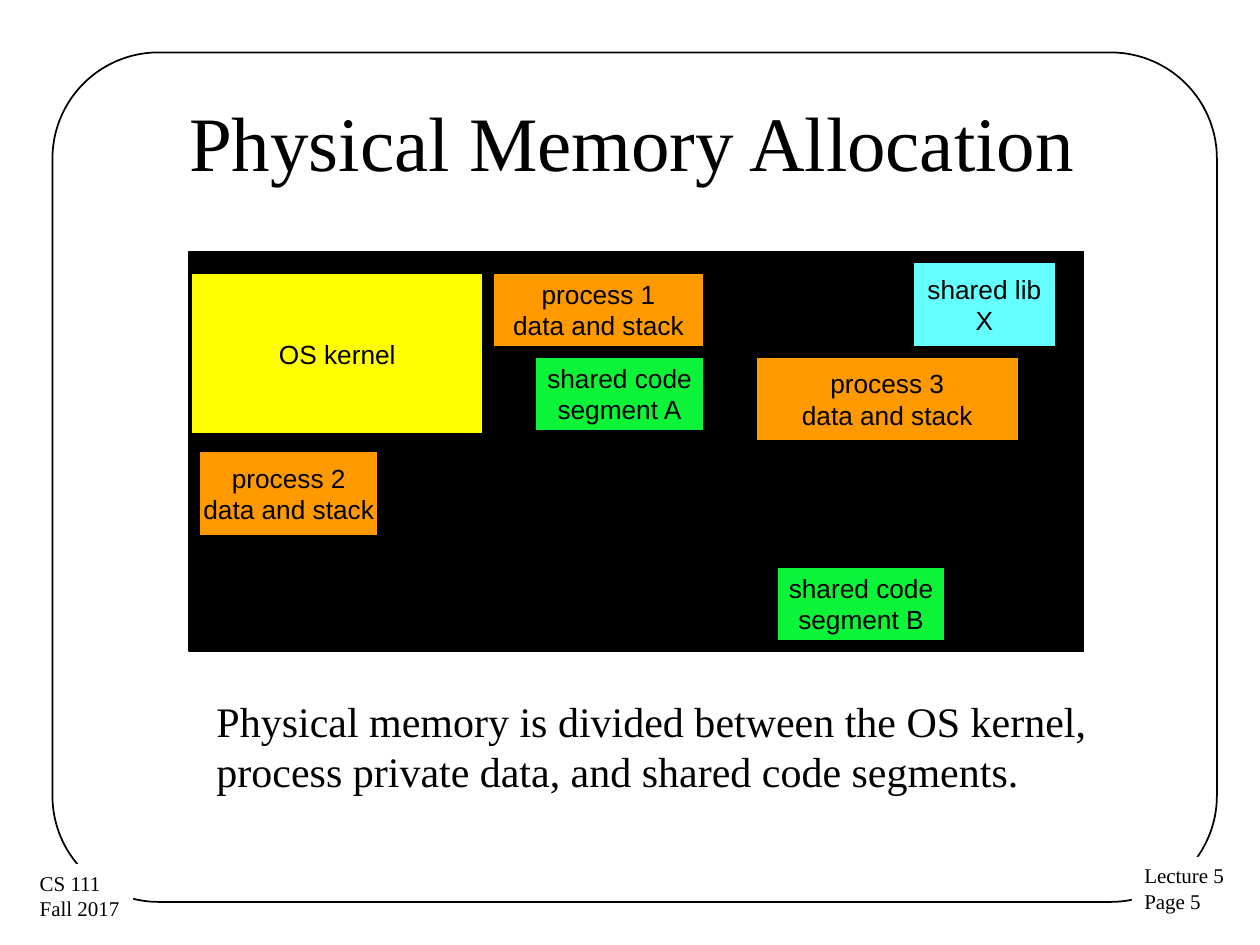
from pptx import Presentation, util as u
from pptx.dml.color import RGBColor
from pptx.enum import shapes, text

UNITS_PER_INCH = 12
SERIF, SANS = "Times New Roman", "Arial"
BLACK, WHITE = "000000", "FFFFFF"
KERNEL, PROCESS, CODE, LIBRARY = "FFFF00", "FF9900", "0CF438", "66FFFF"

SEGMENTS = [
    ("OS kernel", KERNEL, (18.25, 26, 27.75, 15.35)),
    ("process 1\ndata and stack", PROCESS, (47, 26, 20, 7)),
    ("shared code\nsegment A", CODE, (51, 34, 16, 7)),
    ("shared lib\nX", LIBRARY, (87, 25, 13.5, 8)),
    ("process 2\ndata and stack", PROCESS, (19, 43, 17, 8)),
    ("process 3\ndata and stack", PROCESS, (72, 34, 25, 8)),
    ("shared code\nsegment B", CODE, (74, 54, 16, 7)),
]


def color(value):
    return RGBColor.from_string(value)


def grid(cells):
    return [u.Inches(cell / UNITS_PER_INCH) for cell in cells]


def write(frame, words, font, size, align):
    frame.text = words
    for paragraph in frame.paragraphs:
        paragraph.alignment = align
        for run in paragraph.runs:
            run.font.name = font
            run.font.size = u.Pt(size)
            run.font.color.rgb = color(BLACK)


def set_margins(frame, side):
    frame.margin_left = frame.margin_right = u.Inches(side)
    frame.margin_top = frame.margin_bottom = u.Inches(0.05)


def add_block(slide, cells, fill=None, kind=shapes.MSO_SHAPE.RECTANGLE, width=0.75):
    block = slide.shapes.add_shape(kind, *grid(cells))
    block.shadow.inherit = False
    if fill:
        block.fill.solid()
        block.fill.fore_color.rgb = color(fill)
    else:
        block.fill.background()
    block.line.color.rgb = color(BLACK)
    block.line.width = u.Pt(width)
    return block


def add_segment(slide, words, fill, cells):
    frame = add_block(slide, cells, fill).text_frame
    frame.word_wrap = False
    frame.vertical_anchor = text.MSO_ANCHOR.MIDDLE
    set_margins(frame, 0.09)
    write(frame, words, SANS, 15, text.PP_ALIGN.CENTER)


def add_note(slide, words, cells, size, side, fill=None):
    note = slide.shapes.add_textbox(*grid(cells))
    if fill:
        note.fill.solid()
        note.fill.fore_color.rgb = color(fill)
    frame = note.text_frame
    frame.word_wrap = False
    frame.auto_size = text.MSO_AUTO_SIZE.SHAPE_TO_FIT_TEXT
    set_margins(frame, side)
    write(frame, words, SERIF, size, text.PP_ALIGN.LEFT)


def set_title(slide, words, cells):
    title = slide.shapes.title
    title.left, title.top, title.width, title.height = grid(cells)
    frame = title.text_frame
    frame.auto_size = text.MSO_AUTO_SIZE.NONE
    frame.vertical_anchor = text.MSO_ANCHOR.MIDDLE
    write(frame, words, SERIF, 44, text.PP_ALIGN.CENTER)


def main():
    deck = Presentation()
    deck.slide_width, deck.slide_height = u.Inches(10), u.Inches(7.5)
    slide = deck.slides.add_slide(deck.slide_layouts[5])

    border = add_block(slide, (5, 5, 110.9, 80.9), None,
                       shapes.MSO_SHAPE.ROUNDED_RECTANGLE, 1)
    border.adjustments[0] = 0.125
    add_note(slide, "Lecture 5\nPage 5", (107.8, 81.6, 10.1, 6.1), 12, 0.1, WHITE)
    add_note(slide, "CS 111\nFall 2017", (2.6, 82.3, 10.1, 6.1), 12, 0.1, WHITE)

    set_title(slide, "Physical Memory Allocation", (1.5, 5.9, 117.4, 15))
    add_block(slide, (18, 24, 85.2, 38), BLACK)
    for words, fill, cells in SEGMENTS:
        add_segment(slide, words, fill, cells)
    add_note(slide, "Physical memory is divided between the OS kernel,\n"
             "process private data, and shared code segments.",
             (19.3, 65.6, 86.3, 10.9), 24, 0.11)

    deck.save("out.pptx")


if __name__ == "__main__":
    main()
